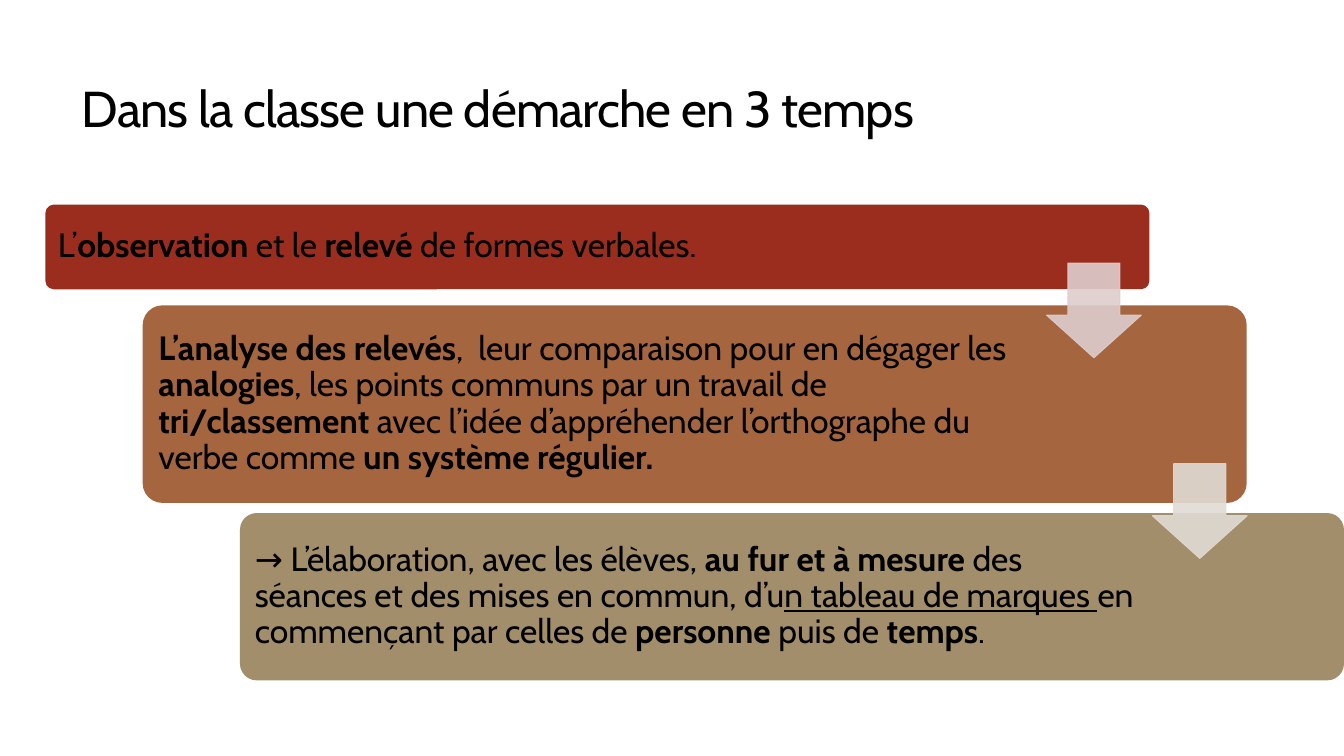
from lxml import etree
from pptx import Presentation
from pptx.dml.color import RGBColor
from pptx.enum.shapes import MSO_SHAPE as Shape
from pptx.enum.text import MSO_ANCHOR as Anchor, PP_ALIGN as Align
from pptx.oxml.ns import qn
from pptx.util import Inches, Pt

FONT = "Cabin"
BLACK = RGBColor(0x00, 0x00, 0x00)
RED = RGBColor(0x9B, 0x2D, 0x1F)
BROWN = RGBColor(0xA4, 0x65, 0x3F)
SAND = RGBColor(0xA2, 0x8E, 0x6A)
PINK_GREY = RGBColor(0xDE, 0xCD, 0xCD)
SAND_GREY = RGBColor(0xE0, 0xDB, 0xD4)

STEP_LEFT, STEP_WIDTH, STEP_SHIFT = 0.45, 10.95, 0.965
ARROW_SIZE = 0.94

# Each step: top, height, right text margin, colour, spans of (text, style)
STEPS = [
    (2.03, 0.84, 1.57, RED, [
        ("L’", ""), ("observation", "bold"), (" et le ", ""),
        ("relevé", "bold"), (" de formes verbales.", "")]),
    (3.03, 1.96, 1.99, BROWN, [
        ("L’analyse des relevés", "bold"),
        (",  leur comparaison pour en dégager les ", ""),
        ("analogies", "bold"),
        (", les points communs par un travail de ", ""),
        ("tri/classement ", "bold"),
        ("avec l’idée d’appréhender l’orthographe du verbe comme ", ""),
        ("un système régulier.", "bold")]),
    (5.09, 1.66, 2.0, SAND, [
        ("→ L’élaboration, avec les élèves, ", ""),
        ("au fur et à mesure ", "bold"),
        ("des séances et des mises en commun, d’u", ""),
        ("n tableau de marques ", "underline"),
        ("en commençant par celles de ", ""),
        ("personne", "bold"), (" puis de ", ""), ("temps", "bold"), (".", "")]),
]

# Each arrow: left, top, colour
ARROWS = [(10.38, 2.61, PINK_GREY), (11.43, 4.6, SAND_GREY)]


def format_span(span, size):
    span.font.name = FONT
    span.font.size = Pt(size)
    span.font.color.rgb = BLACK


def add_title(slide, left, top, width, height):
    title = slide.shapes.title
    title.left, title.top = Inches(left), Inches(top)
    title.width, title.height = Inches(width), Inches(height)
    frame = title.text_frame
    frame.text = "Dans la classe une démarche en 3 temps"
    frame.vertical_anchor = Anchor.MIDDLE
    para = frame.paragraphs[0]
    para.alignment = Align.LEFT
    para.line_spacing = 0.9
    span = para.runs[0]
    format_span(span, 36)
    # Slightly tightened letters
    span.font._element.set("spc", "-60")


def add_step(slide, left, top, width, height, margin_right, color, spans):
    box = slide.shapes.add_shape(Shape.ROUNDED_RECTANGLE, Inches(left),
                                 Inches(top), Inches(width), Inches(height))
    box.adjustments[0] = 0.1
    box.shadow.inherit = False
    box.fill.solid()
    box.fill.fore_color.rgb = color
    box.line.fill.background()
    frame = box.text_frame
    frame.word_wrap = True
    frame.vertical_anchor = Anchor.MIDDLE
    frame.margin_left = frame.margin_top = frame.margin_bottom = Inches(0.1)
    frame.margin_right = Inches(margin_right)
    para = frame.paragraphs[0]
    para.alignment = Align.LEFT
    para.line_spacing = 0.9
    for text, style in spans:
        span = para.add_run()
        span.text = text
        format_span(span, 24)
        span.font.bold = style == "bold"
        span.font.underline = style == "underline"


def add_arrow(slide, left, top, size, color):
    arrow = slide.shapes.add_shape(Shape.DOWN_ARROW, Inches(left), Inches(top),
                                   Inches(size), Inches(size))
    arrow.adjustments[0] = 0.55
    arrow.adjustments[1] = 0.45
    arrow.shadow.inherit = False
    arrow.fill.solid()
    arrow.fill.fore_color.rgb = color
    arrow.line.color.rgb = color
    arrow.line.width = Pt(0.75)
    # Fill and outline at 90 % opacity
    for tone in arrow._element.spPr.iter(qn("a:srgbClr")):
        etree.SubElement(tone, qn("a:alpha")).set("val", "90000")


def main():
    deck = Presentation()
    deck.slide_width, deck.slide_height = Inches(13.33), Inches(7.5)
    slide = deck.slides.add_slide(deck.slide_layouts.get_by_name("Title Only"))

    add_title(slide, 0.71, 0.31, 11, 1.59)
    # Staircase of steps, then the arrows over them
    for index, (top, height, margin_right, color, spans) in enumerate(STEPS):
        add_step(slide, STEP_LEFT + index * STEP_SHIFT, top, STEP_WIDTH,
                 height, margin_right, color, spans)
    for left, top, color in ARROWS:
        add_arrow(slide, left, top, ARROW_SIZE, color)

    deck.save("out.pptx")


if __name__ == "__main__":
    main()
